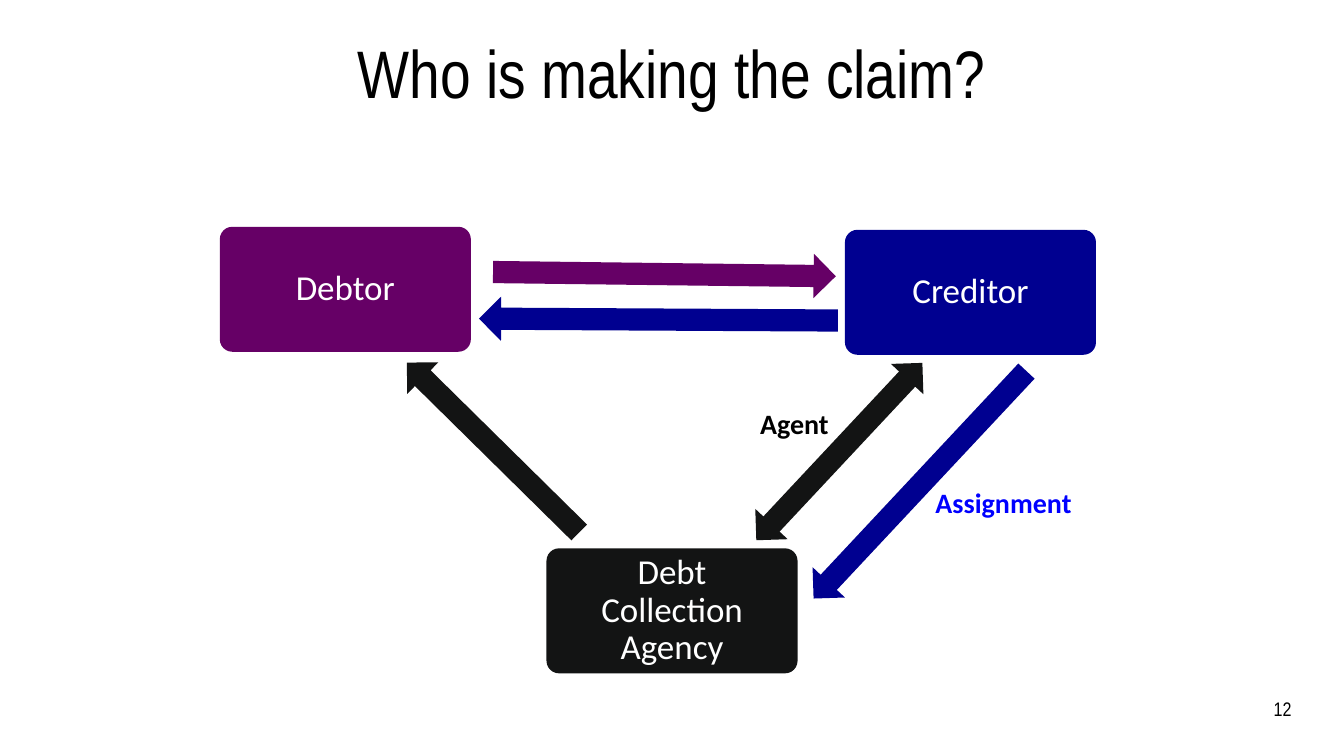
from pptx import Presentation
from pptx.dml.color import RGBColor
from pptx.enum.shapes import MSO_SHAPE as Shape
from pptx.enum.text import MSO_ANCHOR as Anchor, PP_ALIGN as Align
from pptx.util import Inches, Pt

COLORS = {
    "black": "000000",
    "white": "FFFFFF",
    "ink": "131414",
    "navy": "000090",
    "plum": "660066",
    "blue": "0000FF",
}


def color(name):
    return RGBColor.from_string(COLORS[name])


def write(frame, text, size, font, tint, align=Align.LEFT, bold=False):
    para = frame.paragraphs[0]
    para.text = text
    para.alignment = align
    para.font.size = Pt(size)
    para.font.name = font
    para.font.bold = bold
    para.font.color.rgb = color(tint)
    return para


def set_inset(frame, inset):
    frame.margin_left = frame.margin_right = Inches(inset)
    frame.margin_top = frame.margin_bottom = Inches(inset)


def add_text(slide, area, text, size, font, tint, align=Align.LEFT,
             bold=False, inset=None, wrap=True, anchor=Anchor.TOP):
    frame = slide.shapes.add_textbox(*map(Inches, area)).text_frame
    frame.word_wrap = wrap
    frame.vertical_anchor = anchor
    if inset is not None:
        set_inset(frame, inset)
    return write(frame, text, size, font, tint, align, bold)


def add_solid(slide, kind, area, fill):
    shape = slide.shapes.add_shape(kind, *map(Inches, area))
    shape.shadow.inherit = False
    shape.fill.solid()
    shape.fill.fore_color.rgb = color(fill)
    shape.line.fill.background()
    return shape


def add_party(slide, left, top, text, fill):
    box = add_solid(slide, Shape.ROUNDED_RECTANGLE,
                    (left, top, 2.49, 1.24), fill)
    box.adjustments[0] = 0.1
    frame = box.text_frame
    frame.word_wrap = True
    frame.vertical_anchor = Anchor.MIDDLE
    set_inset(frame, 0.14)
    para = write(frame, text, 25, "Calibri", "white", Align.CENTER)
    para.line_spacing = 0.9


def add_arrow(slide, kind, left, top, width, turn, fill):
    arrow = add_solid(slide, kind, (left, top, width, 0.44), fill)
    arrow.rotation = turn


def main():
    deck = Presentation()
    deck.slide_width = Inches(13.33)
    deck.slide_height = Inches(7.5)
    slide = deck.slides.add_slide(deck.slide_layouts[6])

    title = add_text(slide, (0.52, 0.4, 12.28, 0.73),
                     "Who is making the claim?", 48, "Arial Narrow",
                     "black", Align.CENTER, inset=0)
    title.line_spacing = 0.9
    add_text(slide, (12.42, 6.91, 0.39, 0.24), "12", 14, "Arial Narrow",
             "black", Align.RIGHT, inset=0, anchor=Anchor.BOTTOM)

    for party in (
        (2.18, 2.25, "Debtor", "plum"),
        (8.38, 2.28, "Creditor", "navy"),
        (5.42, 5.44, "Debt Collection Agency", "ink"),
    ):
        add_party(slide, *party)

    for arrow in (
        (Shape.RIGHT_ARROW, 4.89, 2.5, 3.4, 0.7, "plum"),
        (Shape.RIGHT_ARROW, 4.75, 2.95, 3.56, 180.3, "navy"),
        (Shape.LEFT_ARROW, 3.69, 4.22, 2.4, 44.6, "ink"),
        (Shape.LEFT_RIGHT_ARROW, 7.12, 4.26, 2.41, 313.1, "ink"),
        (Shape.LEFT_ARROW, 7.58, 4.59, 3.09, 313.1, "navy"),
    ):
        add_arrow(slide, *arrow)

    add_text(slide, (7.44, 3.98, 0.91, 0.44), "Agent", 20, "Calibri",
             "black", bold=True, wrap=False)
    add_text(slide, (9.18, 4.77, 2.26, 0.44), "Assignment", 20, "Calibri",
             "blue", bold=True)

    deck.save("out.pptx")


if __name__ == "__main__":
    main()
